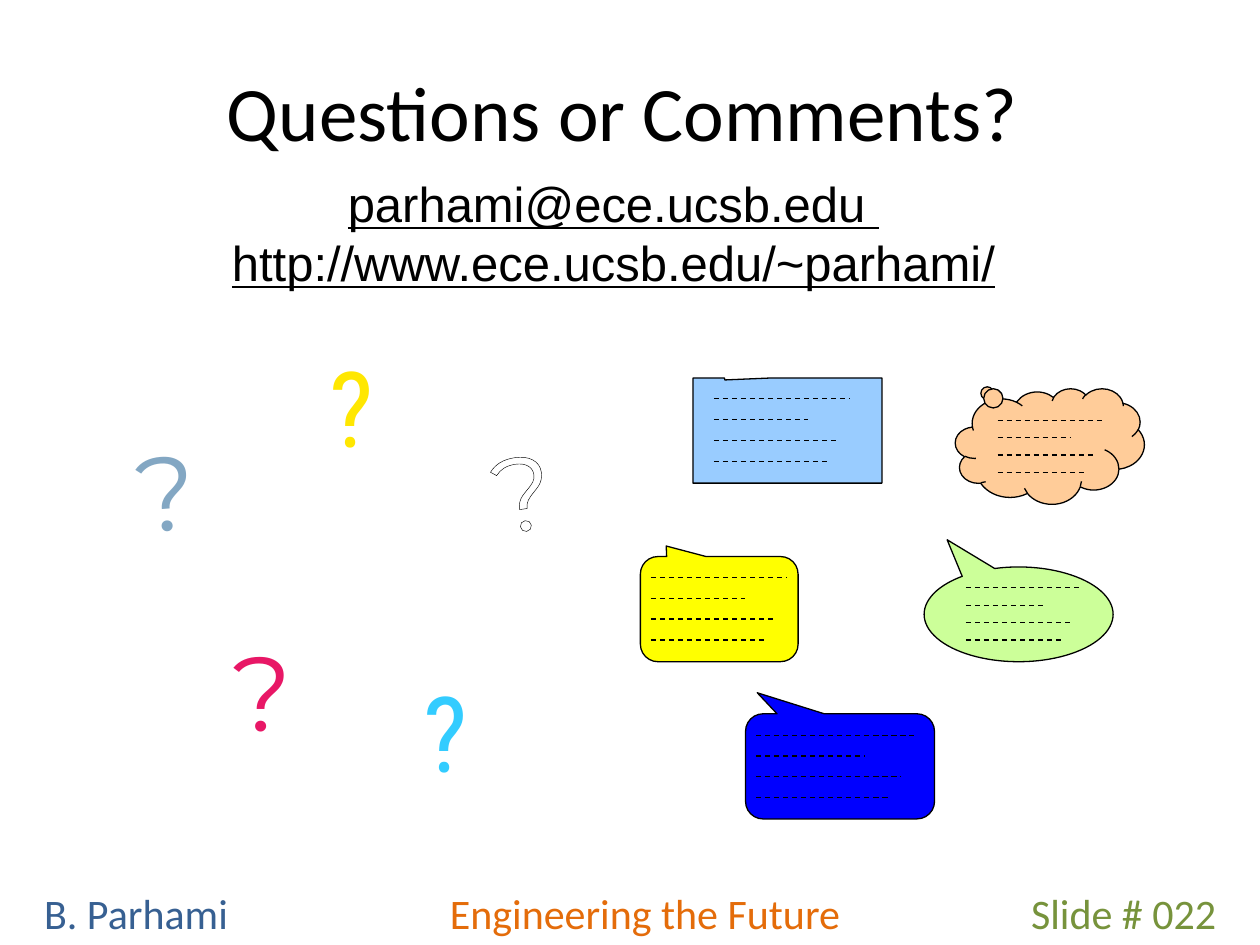
from lxml.etree import SubElement
from pptx import Presentation
from pptx.dml.color import RGBColor
from pptx.enum.dml import MSO_LINE
from pptx.enum.shapes import MSO_CONNECTOR, MSO_SHAPE
from pptx.enum.text import MSO_ANCHOR, PP_ALIGN
from pptx.oxml import parse_xml
from pptx.oxml.ns import nsdecls, qn
from pptx.util import Cm, Pt


def color(hex_code):
    return RGBColor.from_string(hex_code)


def write(box, *lines, size=24, font="Calibri", ink="000000", align=PP_ALIGN.CENTER,
          anchor=MSO_ANCHOR.TOP, wrap=True, underline=None, outline=None):
    frame = box.text_frame
    frame.word_wrap = wrap
    frame.vertical_anchor = anchor
    for index, line in enumerate(lines):
        paragraph = frame.add_paragraph() if index else frame.paragraphs[0]
        paragraph.alignment = align
        run = paragraph.add_run()
        run.text = line
        run.font.size = Pt(size)
        run.font.name = font
        run.font.underline = underline
        run.font.color.rgb = color(ink)
        if outline:
            run.font._element.insert(0, parse_xml(
                f'<a:ln {nsdecls("a")} w="{Pt(0.75)}"><a:solidFill>'
                f'<a:srgbClr val="{outline}"/></a:solidFill></a:ln>'))


deck = Presentation()
deck.slide_width, deck.slide_height = Cm(25.4), Cm(19.05)
slide = deck.slides.add_slide(deck.slide_layouts[5])
shapes = slide.shapes

title = shapes.title
title.left, title.top, title.width, title.height = Cm(1.27), Cm(0.64), Cm(22.56), Cm(3.18)
write(title, "Questions or Comments?", size=44, anchor=MSO_ANCHOR.MIDDLE)

contact = shapes.add_textbox(Cm(4.11), Cm(3.38), Cm(16.51), Cm(2.64))
write(contact, "parhami@ece.ucsb.edu ", "http://www.ece.ucsb.edu/~parhami/",
      size=28, font="Arial", underline=True)

callouts = [
    (MSO_SHAPE.RECTANGULAR_CALLOUT, (13.97, 7.62, 3.81, 2.12), "99CCFF",
     (-0.331, -0.481), (14.39, 8.04, 2.75, 0.42)),
    (MSO_SHAPE.OVAL_CALLOUT, (18.63, 11.43, 3.81, 1.91), "CCFF99",
     (-0.378, -0.787), (19.47, 11.85, 2.33, 0.35)),
    (MSO_SHAPE.CLOUD_CALLOUT, (19.26, 7.83, 3.81, 2.33), "FFCC99",
     (-0.337, -0.466), (20.11, 8.47, 2.12, 0.35)),
    (MSO_SHAPE.ROUNDED_RECTANGULAR_CALLOUT, (12.91, 11.22, 3.18, 2.12), "FFFF00",
     (-0.336, -0.6, 0.167), (13.12, 11.64, 2.75, 0.42)),
    (MSO_SHAPE.ROUNDED_RECTANGULAR_CALLOUT, (15.03, 14.39, 3.81, 2.12), "0000FF",
     (-0.438, -0.7, 0.167), (15.24, 14.82, 3.18, 0.42)),
]
for kind, place, fill, tail, (left, top, length, gap) in callouts:
    bubble = shapes.add_shape(kind, *map(Cm, place))
    bubble.shadow.inherit = False
    bubble.fill.solid()
    bubble.fill.fore_color.rgb = color(fill)
    bubble.line.color.rgb = color("000000")
    bubble.line.width = Pt(0.75)
    for index, value in enumerate(tail):
        bubble.adjustments[index] = value
    for row, share in enumerate((1, 0.69, 0.92, 0.85)):
        y = Cm(top + row * gap)
        scribble = shapes.add_connector(
            MSO_CONNECTOR.STRAIGHT, Cm(left), y, Cm(left + length * share), y)
        scribble.line.color.rgb = color("000000")
        scribble.line.width = Pt(0.75)
        scribble.line.dash_style = MSO_LINE.DASH
        SubElement(scribble._element.spPr, qn("a:effectLst"))

question_marks = [
    ((9.32, 8.46, 2.54, 3.81), 351.6, "Montserrat", "FFFFFF", "000000"),
    ((5.92, 6.78, 2.34, 3.96), 0, "Roboto Condensed", "FFE701", None),
    ((7.82, 13.34, 2.34, 3.2), 0, "Roboto Condensed", "33CCFF", None),
    ((4.01, 12.5, 2.54, 3.61), 0, "Montserrat", "E81766", None),
    ((2.11, 8.46, 2.54, 3.81), 355.4, "Montserrat", "83A7C3", None),
]
for place, angle, font, ink, outline in question_marks:
    mark = shapes.add_textbox(*map(Cm, place))
    mark.rotation = angle
    write(mark, "?", size=60, font=font, ink=ink, wrap=False, outline=outline)

footers = [
    ("B. Parhami", 0.64, 5.28, "376092", PP_ALIGN.LEFT),
    ("Engineering the Future", 5.92, 14.17, "E46C0A", PP_ALIGN.CENTER),
    ("Slide # 022", 20.12, 4.65, "77933C", PP_ALIGN.RIGHT),
]
for words, left, width, ink, align in footers:
    footer = shapes.add_textbox(Cm(left), Cm(17.76), Cm(width), Cm(1.27))
    write(footer, words, ink=ink, align=align)

deck.save("out.pptx")
